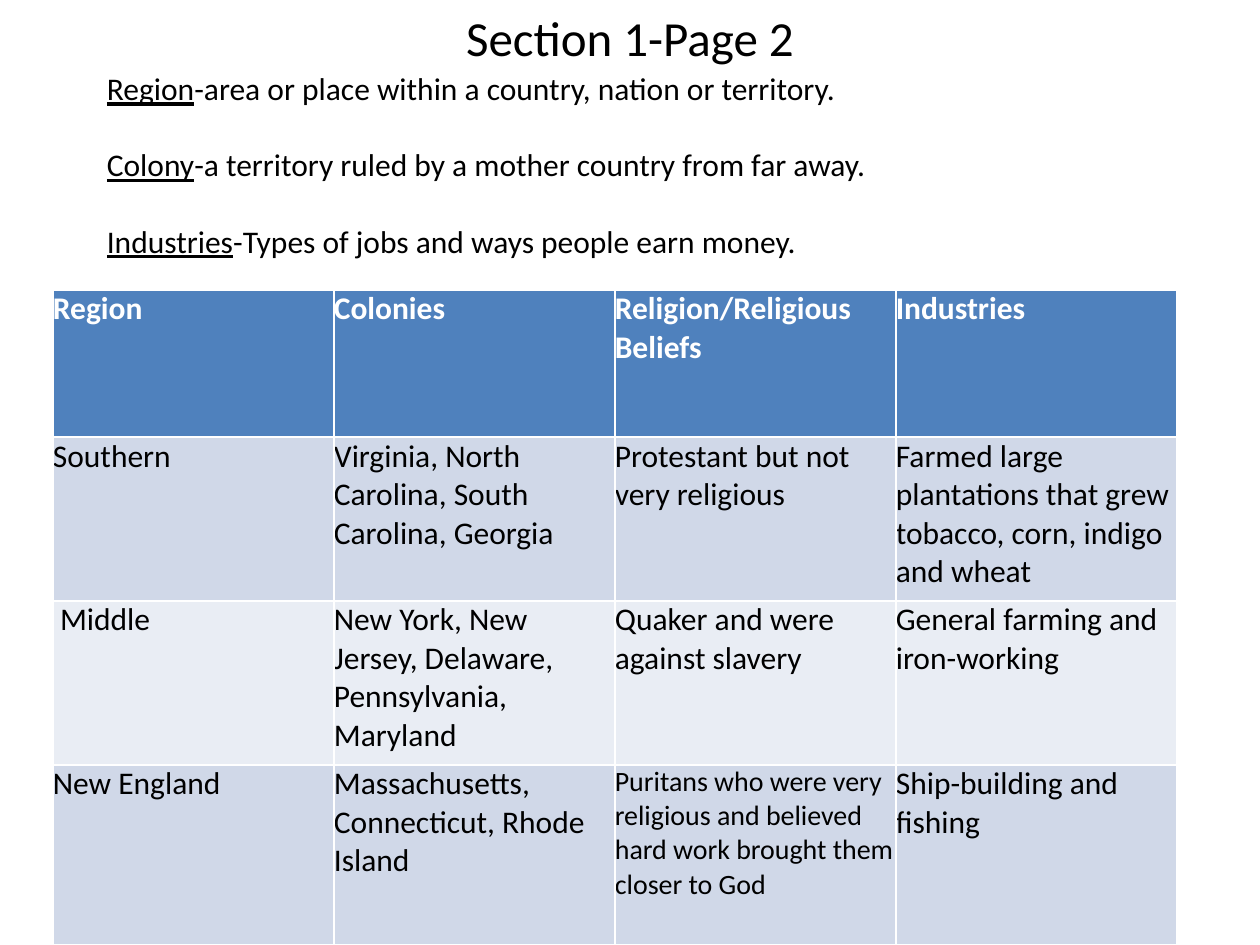
from pptx import Presentation
from pptx.dml.color import RGBColor
from pptx.enum.text import MSO_ANCHOR, PP_ALIGN
from pptx.util import Inches, Pt

TITLE = "Section 1-Page 2"
TERMS = [
    ("Region", "-area or place within a country, nation or territory."),
    ("Colony", "-a territory ruled by a mother country from far away."),
    ("Industries", "-Types of jobs and ways people earn money."),
]
ROWS = [
    ("Region", "Colonies", "Religion/Religious Beliefs", "Industries"),
    ("Southern", "Virginia, North Carolina, South Carolina, Georgia",
     "Protestant but not very religious",
     "Farmed large plantations that grew tobacco, corn, indigo and wheat"),
    (" Middle", "New York, New Jersey, Delaware, Pennsylvania, Maryland",
     "Quaker and were against slavery", "General farming and iron-working"),
    ("New England", "Massachusetts, Connecticut, Rhode Island",
     "Puritans who were very religious and believed hard work brought them closer to God",
     "Ship-building and fishing"),
]
TALL = (1.17, 1.3, 1.3, 1.43)
WIDE = 2.23
SMALL = {(3, 2): 16}

BLACK = RGBColor(0, 0, 0)
WHITE = RGBColor(255, 255, 255)
BLUE = RGBColor(0x4F, 0x81, 0xBD)
BANDS = (RGBColor(0xE9, 0xED, 0xF4), RGBColor(0xD0, 0xD8, 0xE8))


def style(obj, **vals):
    for key, val in vals.items():
        setattr(obj, key, val)


def write(para, text, size=18, color=BLACK, **vals):
    run = para.add_run()
    run.text = text
    style(run.font, name="Calibri", size=Pt(size), **vals)
    run.font.color.rgb = color


def place(shape, *box):
    style(shape, **dict(zip(("left", "top", "width", "height"), map(Inches, box))))


deck = Presentation()
style(deck, slide_width=Inches(10), slide_height=Inches(7.5))
slide = deck.slides.add_slide(deck.slide_layouts[5])

title = slide.shapes.title
place(title, 0.5, 0, 9, 0.58)
title.text_frame.vertical_anchor = MSO_ANCHOR.MIDDLE
head = title.text_frame.paragraphs[0]
head.alignment = PP_ALIGN.CENTER
write(head, TITLE, 28)

grid = slide.shapes.add_table(
    len(ROWS), len(ROWS[0]), Inches(0.42), Inches(2.3),
    Inches(WIDE * len(ROWS[0])), Inches(sum(TALL))).table
for col in grid.columns:
    col.width = Inches(WIDE)
for r, (row, tall) in enumerate(zip(ROWS, TALL)):
    grid.rows[r].height = Inches(tall)
    for c, text in enumerate(row):
        cell = grid.cell(r, c)
        style(cell, margin_left=0, margin_top=0, margin_right=0, margin_bottom=0)
        cell.fill.solid()
        cell.fill.fore_color.rgb = BANDS[r % 2] if r else BLUE
        write(cell.text_frame.paragraphs[0], text, SMALL.get((r, c), 18),
              BLACK if r else WHITE, bold=r == 0)

terms = slide.shapes.add_textbox(*map(Inches, (0.75, 0.5, 8.5, 1.62))).text_frame
terms.word_wrap = True
for i, (term, gloss) in enumerate(TERMS):
    para = terms.add_paragraph() if i else terms.paragraphs[0]
    para.space_before = Pt(22 if i else 0)
    write(para, term, underline=True)
    write(para, gloss)

deck.save("out.pptx")
